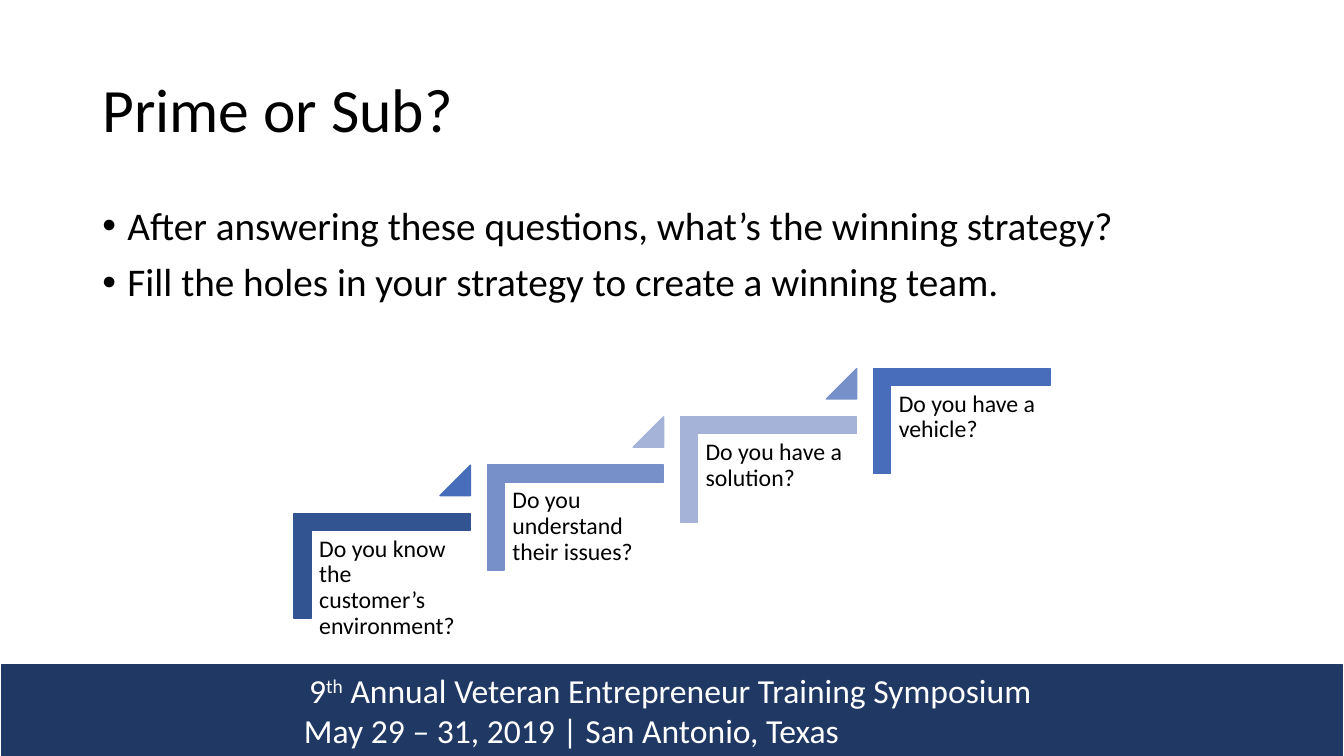
"""Build the "Prime or Sub?" slide with its staircase of four questions."""
from lxml.etree import SubElement
from pptx import Presentation
from pptx.dml.color import RGBColor
from pptx.enum.shapes import MSO_SHAPE
from pptx.enum.text import MSO_ANCHOR
from pptx.oxml.ns import qn
from pptx.util import Pt

SCALE = 9525
FONT = "Calibri"
CORNER = MSO_SHAPE.from_xml("corner")
COLORS = {
    "text": "000000",
    "footer": "203864",
    "footer_text": "FFFFFF",
    "navy": "325491",
    "royal": "476DBB",
    "steel": "7790C9",
    "pale": "A6B3D9",
}
BULLETS = [
    "After answering these questions, what’s the winning strategy?",
    "Fill the holes in your strategy to create a winning team.",
]
STEPS = [
    ("Do you know the customer’s environment?", "navy", "royal"),
    ("Do you understand their issues?", "steel", "pale"),
    ("Do you have a solution?", "pale", "steel"),
    ("Do you have a vehicle?", "royal", None),
]
FOOTER_LINES = [
    (283, [("9", None), ("th", "30000"),
           (" Annual Veteran Entrepreneur Training Symposium", None)]),
    (278, [("May 29 – 31, 2019 | San Antonio, Texas", None)]),
]


def px(length):
    return round(length * SCALE)


def add_run(paragraph, text, size, color="text"):
    run = paragraph.add_run()
    run.text = text
    run.font.color.rgb = RGBColor.from_string(COLORS[color])
    for name, value in {"name": FONT, "size": Pt(size)}.items():
        setattr(run.font, name, value)
    return run


def add_frame(slide, box, **settings):
    frame = slide.shapes.add_textbox(*map(px, box)).text_frame
    for name, value in {"word_wrap": True, **settings}.items():
        setattr(frame, name, value)
    return frame


def add_block(slide, kind, box, color, adjustments=()):
    block = slide.shapes.add_shape(kind, *map(px, box))
    block.shadow.inherit = False
    block.fill.solid()
    block.fill.fore_color.rgb = RGBColor.from_string(COLORS[color])
    block.line.color.rgb = RGBColor.from_string(COLORS[color])
    block.line.width = Pt(1)
    for index, value in enumerate(adjustments):
        block.adjustments[index] = value
    return block


def add_footer(slide, box):
    band = add_block(slide, MSO_SHAPE.RECTANGLE, box, "footer")
    frame = band.text_frame
    frame.vertical_anchor = MSO_ANCHOR.MIDDLE
    for index, (indent, runs) in enumerate(FOOTER_LINES):
        line = frame.add_paragraph() if index else frame.paragraphs[0]
        properties = line._p.get_or_add_pPr()
        properties.set("algn", "l")
        properties.set("marL", str(px(indent)))
        for text, baseline in runs:
            run = add_run(line, text, 24, "footer_text")
            if baseline:
                run.font._element.set("baseline", baseline)


def add_title(slide, box):
    title = add_frame(slide, box, vertical_anchor=MSO_ANCHOR.MIDDLE).paragraphs[0]
    title.line_spacing = 0.9
    add_run(title, "Prime or Sub?", 44)


def add_bullets(slide, box):
    frame = add_frame(slide, box)
    for index, text in enumerate(BULLETS):
        bullet = frame.add_paragraph() if index else frame.paragraphs[0]
        properties = bullet._p.get_or_add_pPr()
        properties.set("marL", str(px(24)))
        properties.set("indent", str(px(-24)))
        SubElement(properties, qn("a:buFont"), typeface="Arial")
        SubElement(properties, qn("a:buChar"), char="•")
        bullet.line_spacing = 0.9
        if index:
            bullet.space_before = Pt(10)
        add_run(bullet, text, 28)


def add_step(slide, box, question, color, arrow_color):
    left, top, width, height = box
    turn = (width - height) // 2
    corner = add_block(slide, CORNER, (left + turn, top - turn, height, width),
                       color, (0.161, 0.161))
    corner.rotation = 90
    margins = dict.fromkeys(
        ("margin_left", "margin_top", "margin_right", "margin_bottom"), px(7))
    label = add_frame(slide, (left + 17, top + 15, 151, 132), **margins).paragraphs[0]
    label.line_spacing = 0.9
    add_run(label, question, 17)
    if arrow_color:
        add_block(slide, MSO_SHAPE.ISOSCELES_TRIANGLE,
                  (left + width - 29, top - 46, 29, 29), arrow_color, (1,))


def add_staircase(slide, box):
    left, top, width, height = box
    step_width, step_height = 168, 100
    last = len(STEPS) - 1
    advance = (width - step_width) / last
    rise = (height - step_height) / last
    for index, step in enumerate(STEPS):
        step_box = (round(left + index * advance), round(top + (last - index) * rise),
                    step_width, step_height)
        add_step(slide, step_box, *step)


def main():
    deck = Presentation()
    deck.slide_width, deck.slide_height = px(1280), px(720)
    slide = deck.slides.add_slide(deck.slide_layouts[6])
    add_footer(slide, (2, 633, 1276, 87))
    add_title(slide, (88, 38, 1104, 139))
    add_bullets(slide, (88, 192, 1104, 457))
    add_staircase(slide, (280, 351, 720, 238))
    deck.save("out.pptx")


if __name__ == "__main__":
    main()
